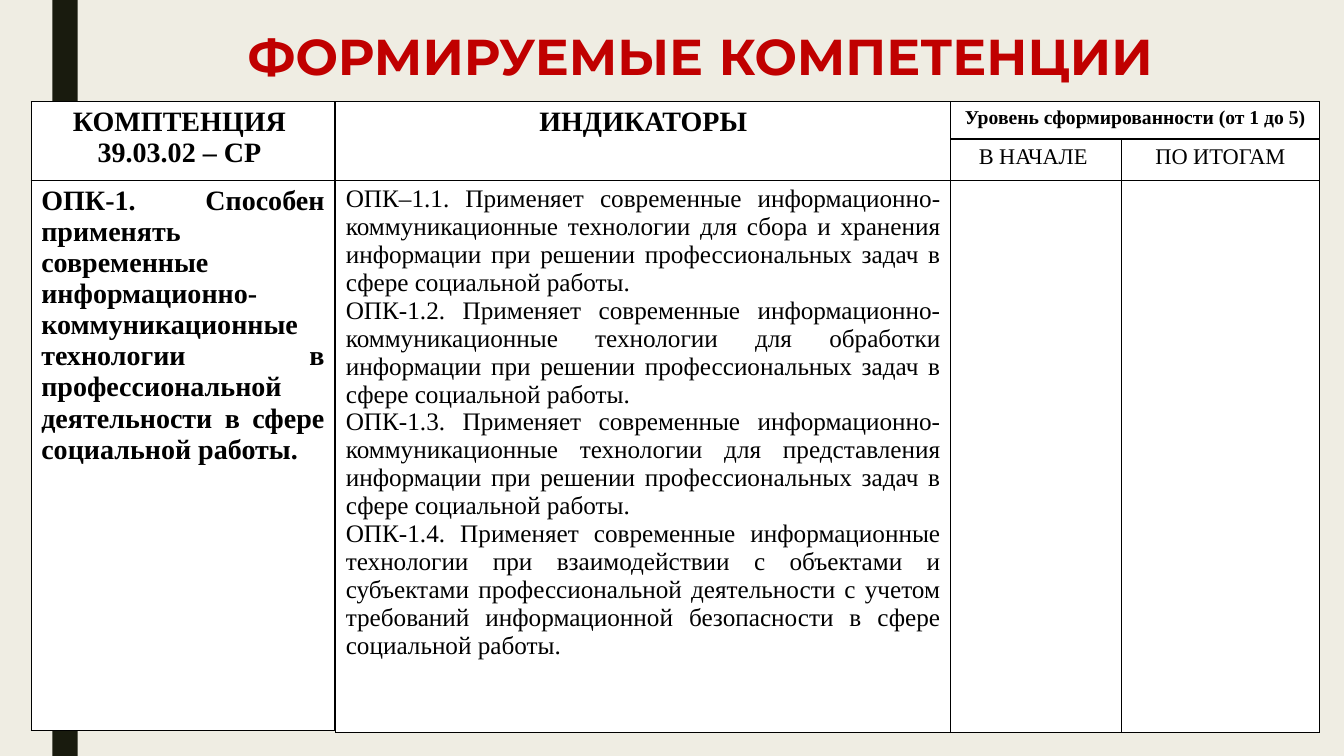
import pptx
import pptx.util
import pptx.dml.color
import pptx.enum.shapes
import pptx.enum.text
from lxml import etree

Inches, Pt = pptx.util.Inches, pptx.util.Pt
ALIGN = pptx.enum.text.PP_ALIGN
C, J = ALIGN.CENTER, ALIGN.JUSTIFY
A = "http://schemas.openxmlformats.org/drawingml/2006/main"

# Content: title runs are (text, size)
TITLE = [("ФОРМИРУЕМЫЕ", 36), (" ", 39.6), ("КОМПЕТЕНЦИИ", 36)]
INDICATORS = [
    "ОПК–1.1. Применяет современные информационно-коммуникационные технологии для сбора и хранения информации при решении профессиональных задач в сфере социальной работы. ",
    "ОПК-1.2. Применяет современные информационно-коммуникационные технологии для обработки информации при решении профессиональных задач в сфере социальной работы. ",
    "ОПК-1.3. Применяет современные информационно-коммуникационные технологии для представления информации при решении профессиональных задач в сфере социальной работы. ",
    "ОПК-1.4. Применяет современные информационные технологии при взаимодействии с объектами и субъектами профессиональной деятельности с учетом требований информационной безопасности в сфере социальной работы.",
]
COMPETENCE = ("ОПК-1. Способен применять современные информационно-коммуникационные "
              "технологии в профессиональной деятельности в сфере социальной работы.")

# Cells: (row, column): (paragraphs, size, bold, alignment)
TABLES = [
    {"left": 0.31, "cols": [3.01], "rows": [0.78, 5.46], "merges": [],
     "cells": {(0, 0): (["КОМПТЕНЦИЯ ", "39.03.02 – СР "], 20, True, C),
               (1, 0): ([COMPETENCE], 20, True, J)}},
    {"left": 3.33, "cols": [6.1, 1.69, 1.97], "rows": [0.37, 0.39, 5.48],
     "merges": [((0, 0), (1, 0)), ((0, 1), (0, 2))],
     "cells": {(0, 0): (["ИНДИКАТОРЫ"], 20, True, C),
               (0, 1): (["Уровень сформированности (от 1 до 5)"], 14, True, C),
               (1, 1): (["В НАЧАЛЕ "], 16, False, C),
               (1, 2): (["ПО ИТОГАМ"], 16, False, C),
               (2, 0): (INDICATORS, 18, False, J)}},
]
TABLE_TOP = 1.01


def rgb(color):
    return pptx.dml.color.RGBColor.from_string(color)


def add_run(p, text, size, bold, font, color):
    r = p.add_run()
    r.text = text
    r.font.size, r.font.bold, r.font.name = Pt(size), bold, font
    r.font.color.rgb = rgb(color)


def style_cell(cell):
    # Borders come before the fill in the cell properties
    tcPr = cell._tc.get_or_add_tcPr()
    for side in ("lnL", "lnR", "lnT", "lnB"):
        ln = etree.SubElement(tcPr, f"{{{A}}}{side}", w=str(Pt(1)))
        fill = etree.SubElement(ln, f"{{{A}}}solidFill")
        etree.SubElement(fill, f"{{{A}}}srgbClr", val="000000")
    cell.fill.solid()
    cell.fill.fore_color.rgb = rgb("FFFFFF")


def add_table(s, left, cols, rows, merges, cells):
    table = s.shapes.add_table(len(rows), len(cols), Inches(left), Inches(TABLE_TOP),
                               Inches(sum(cols)), Inches(sum(rows))).table
    table.first_row = table.horz_banding = False
    for col, width in zip(table.columns, cols):
        col.width = Inches(width)
    for row, height in zip(table.rows, rows):
        row.height = Inches(height)
    for cell in table.iter_cells():
        style_cell(cell)
    for first, last in merges:
        table.cell(*first).merge(table.cell(*last))
    for place, (lines, size, bold, align) in cells.items():
        tf = table.cell(*place).text_frame
        for i, line in enumerate(lines):
            p = tf.add_paragraph() if i else tf.paragraphs[0]
            p.alignment = align
            add_run(p, line, size, bold, "Times New Roman", "000000")


prs = pptx.Presentation()
prs.slide_width, prs.slide_height = Inches(13.33), Inches(7.5)
s = prs.slides.add_slide(prs.slide_layouts[5])
s.background.fill.solid()
s.background.fill.fore_color.rgb = rgb("EFEDE3")

# Dark vertical stripe
stripe = s.shapes.add_shape(pptx.enum.shapes.MSO_SHAPE.RECTANGLE, Inches(0.52), 0,
                            Inches(0.25), prs.slide_height)
stripe.shadow.inherit = False
stripe.fill.solid()
stripe.fill.fore_color.rgb = rgb("191B0E")
stripe.line.fill.background()

# Title
title = s.shapes.title
title.left, title.top = Inches(1.1), Inches(0.29)
title.width, title.height = Inches(11.69), Inches(0.57)
tf = title.text_frame
tf.word_wrap = True
tf.auto_size = pptx.enum.text.MSO_AUTO_SIZE.NONE
tf.vertical_anchor = pptx.enum.text.MSO_ANCHOR.MIDDLE
p = tf.paragraphs[0]
p.alignment, p.line_spacing = C, 0.89
for text, size in TITLE:
    add_run(p, text, size, True, "Montserrat", "C00000")

# Competence table and indicator table, side by side
for spec_of_table in TABLES:
    add_table(s, **spec_of_table)

prs.save("out.pptx")
